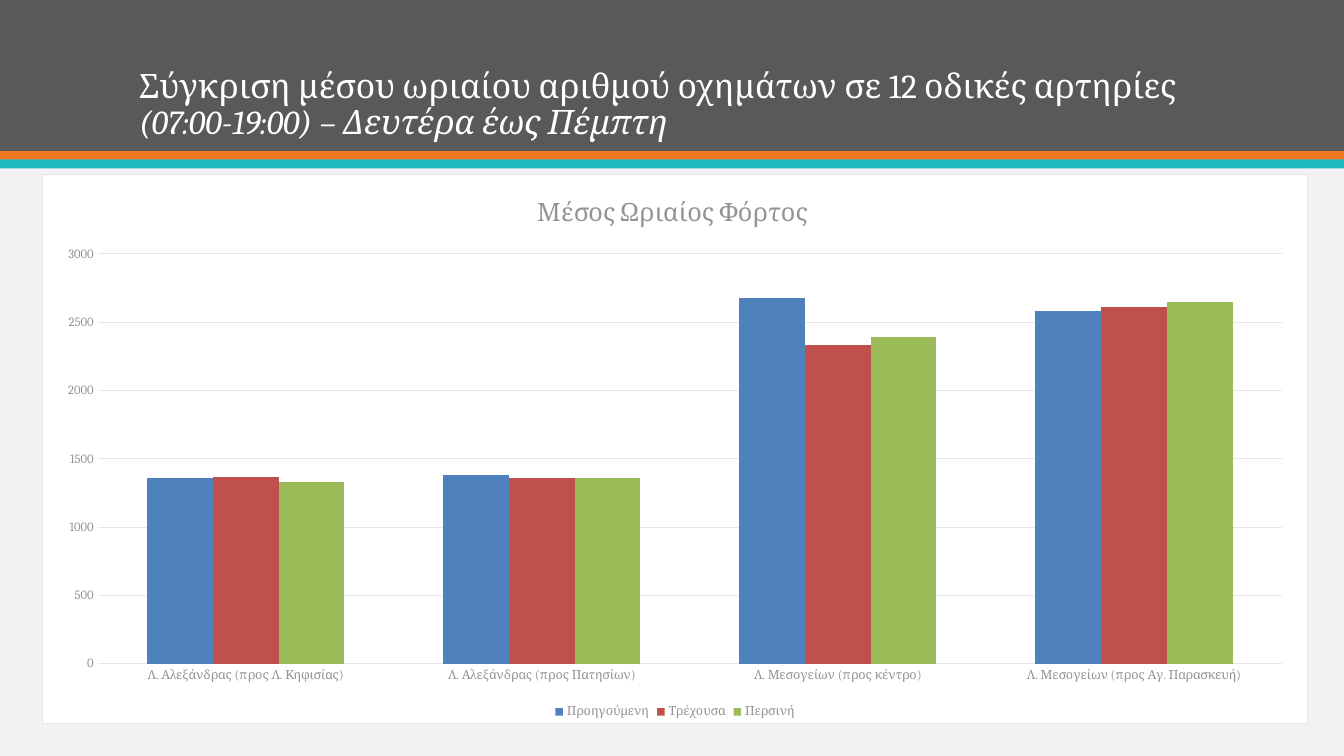
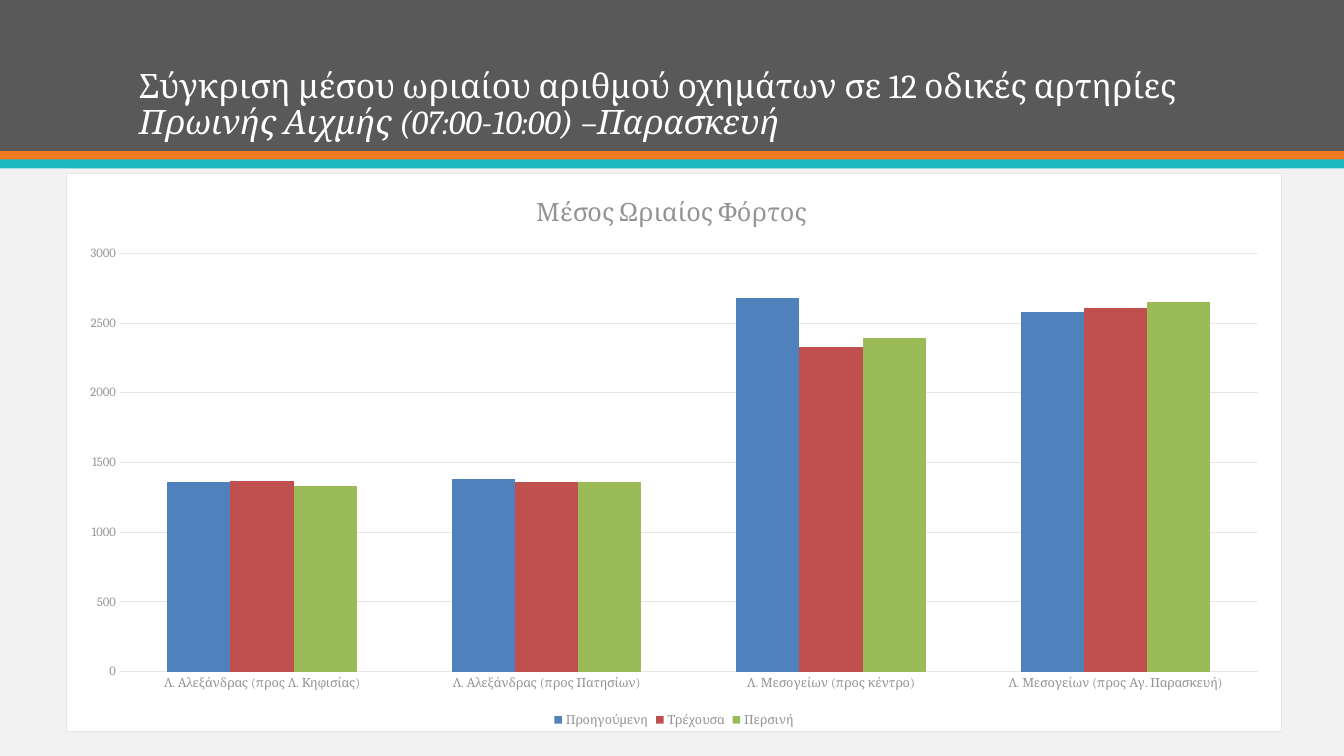
from lxml import etree
from pptx import Presentation
from pptx.chart import data as cd
from pptx.dml.color import RGBColor
from pptx.enum import chart as ec, shapes as es, text as et
from pptx.oxml import parse_xml
from pptx.oxml.ns import nsdecls
from pptx.util import Inches, Pt

FONT = "Cambria"
PAGE = RGBColor(0xF2, 0xF2, 0xF2)
DARK = RGBColor(0x59, 0x59, 0x59)
ORANGE = RGBColor(0xEF, 0x79, 0x20)
TEAL = RGBColor(0x1E, 0xB8, 0xC1)
WHITE = RGBColor(0xFF, 0xFF, 0xFF)
GREY = RGBColor(0x93, 0x93, 0x93)
GRID = RGBColor(0xE6, 0xE6, 0xE6)
BLUE = RGBColor(0x4F, 0x81, 0xBD)
RED = RGBColor(0xC0, 0x50, 0x4D)
GREEN = RGBColor(0x9B, 0xBB, 0x59)

WIDTH = 13.33
BANDS = [(0, 1.5, DARK), (1.5, 0.09, ORANGE), (1.58, 0.09, TEAL)]
HEAD = "Σύγκριση μέσου ωριαίου αριθμού οχημάτων σε 12 οδικές αρτηρίες "
ROADS = [
    "Λ. Αλεξάνδρας (προς Λ. Κηφισίας)",
    "Λ. Αλεξάνδρας (προς Πατησίων)",
    "Λ. Μεσογείων (προς κέντρο)",
    "Λ. Μεσογείων (προς Αγ. Παρασκευή)",
]
FLOWS = [
    ("Προηγούμενη", BLUE, (1360, 1380, 2680, 2580)),
    ("Τρέχουσα", RED, (1370, 1360, 2330, 2610)),
    ("Περσινή", GREEN, (1330, 1360, 2390, 2650)),
]
SLIDES = [
    ("(07:00-19:00) – Δευτέρα έως Πέμπτη", (0.42, 1.73, 12.55, 5.45)),
    ("Πρωινής Αιχμής (07:00-10:00) –Παρασκευή", (0.65, 1.72, 12.07, 5.54)),
]


def style(font, size, color, italic=False):
    font.name = FONT
    font.size = Pt(size)
    font.color.rgb = color
    font.bold = False
    font.italic = italic


def write(para, text, size=24, color=WHITE, italic=False):
    run = para.add_run()
    run.text = text
    style(run.font, size, color, italic)


def add_bands(slide):
    """Draw the header bands behind the title."""
    tree = slide.shapes.element
    for i, (top, height, color) in enumerate(BANDS):
        band = slide.shapes.add_shape(
            es.MSO_SHAPE.RECTANGLE, 0, Inches(top), Inches(WIDTH), Inches(height))
        band.shadow.inherit = False
        band.fill.solid()
        band.fill.fore_color.rgb = color
        band.line.fill.background()
        tree.insert(2 + i, band.element)


def add_title(slide, period):
    title = slide.shapes.title
    title.left, title.top = Inches(1.28), 0
    title.width, title.height = Inches(10.98), Inches(1.46)
    frame = title.text_frame
    frame.word_wrap = True
    frame.auto_size = et.MSO_AUTO_SIZE.NONE
    frame.vertical_anchor = et.MSO_ANCHOR.BOTTOM
    para = frame.paragraphs[0]
    para.alignment = et.PP_ALIGN.LEFT
    para.line_spacing = 0.9
    write(para, HEAD)
    write(para, period, italic=True)


def frame_chart(chart):
    """Give the chart area a white fill and a thin border."""
    area = parse_xml(f"<c:spPr {nsdecls('c', 'a')}/>")
    line = etree.Element(area.nsmap["a"].join("{}") + "ln", w=str(Pt(0.75)))
    for parent, color in ((area, WHITE), (line, GRID)):
        fill = parse_xml(
            f'<a:solidFill {nsdecls("a")}><a:srgbClr val="{color}"/></a:solidFill>')
        parent.append(fill)
    area.append(line)
    chart.element.xpath("c:chart")[0].addnext(area)


def add_chart(slide, box):
    data = cd.CategoryChartData()
    data.categories = ROADS
    for name, _, values in FLOWS:
        data.add_series(name, values)
    chart = slide.shapes.add_chart(
        ec.XL_CHART_TYPE.COLUMN_CLUSTERED, *map(Inches, box), data).chart
    style(chart.font, 10, DARK)
    frame_chart(chart)

    chart.has_title = True
    write(chart.chart_title.text_frame.paragraphs[0],
          "Μέσος Ωριαίος Φόρτος ", size=18, color=GREY)
    chart.chart_title.include_in_layout = False

    chart.has_legend = True
    chart.legend.position = ec.XL_LEGEND_POSITION.BOTTOM
    chart.legend.include_in_layout = False
    style(chart.legend.font, 9, GREY)

    for axis in (chart.category_axis, chart.value_axis):
        axis.major_tick_mark = axis.minor_tick_mark = ec.XL_TICK_MARK.NONE
        axis.format.line.fill.background()
        style(axis.tick_labels.font, 9, GREY)
    scale = chart.value_axis
    scale.minimum_scale, scale.maximum_scale, scale.major_unit = 0, 3000, 500
    scale.has_major_gridlines = True
    scale.major_gridlines.format.line.color.rgb = GRID
    scale.major_gridlines.format.line.width = Pt(0.75)

    plot = chart.plots[0]
    plot.gap_width = 150
    plot.overlap = 0
    plot.vary_by_categories = False
    for series, (_, color, _) in zip(plot.series, FLOWS):
        series.format.fill.solid()
        series.format.fill.fore_color.rgb = color


def main():
    deck = Presentation()
    deck.slide_width, deck.slide_height = Inches(WIDTH), Inches(7.5)
    back = deck.slide_master.background.fill
    back.solid()
    back.fore_color.rgb = PAGE
    for period, box in SLIDES:
        slide = deck.slides.add_slide(deck.slide_layouts[5])
        add_bands(slide)
        add_title(slide, period)
        add_chart(slide, box)
    deck.save("out.pptx")


if __name__ == "__main__":
    main()
